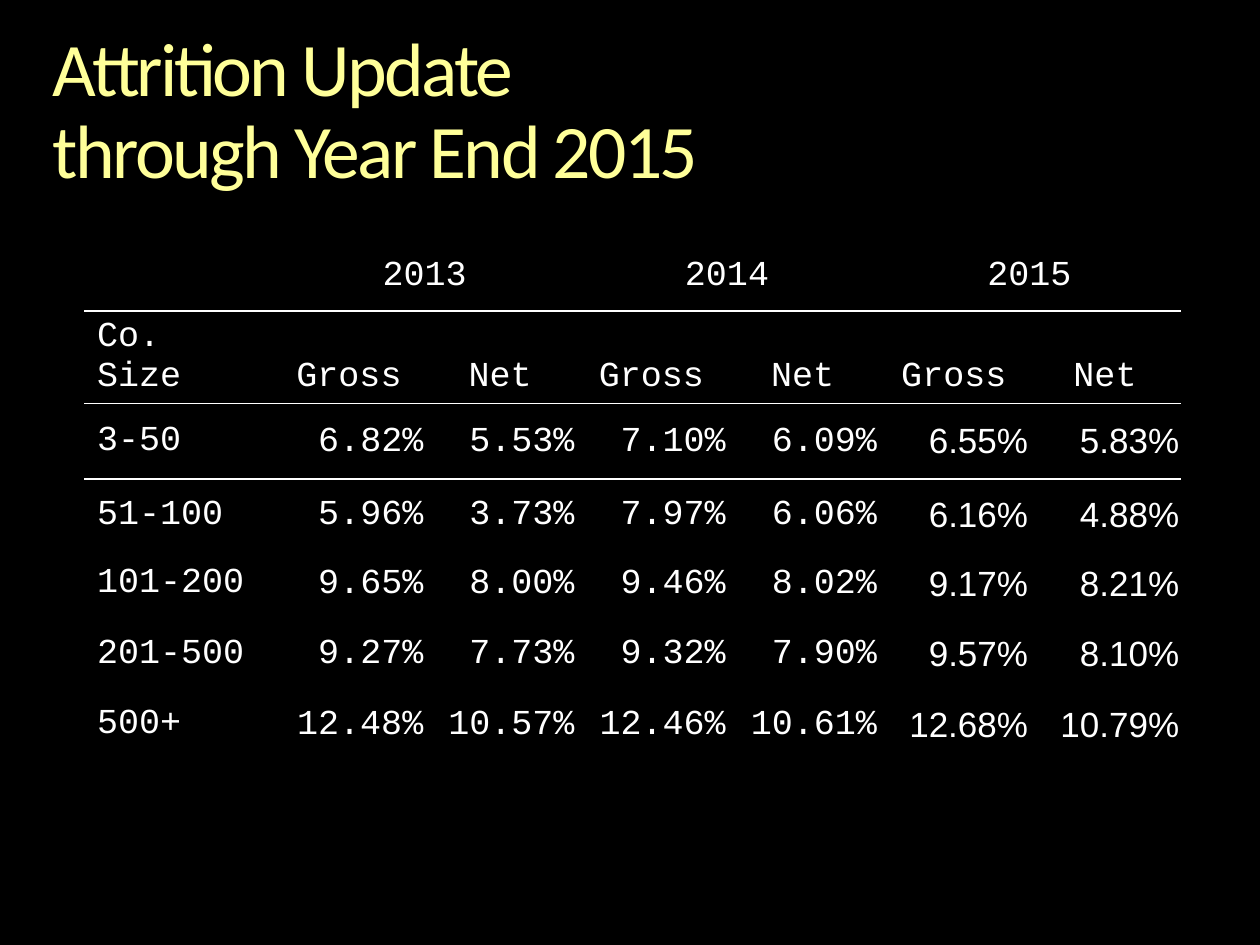
from pptx import Presentation
from pptx import util as u
from pptx.dml.color import RGBColor
from pptx.enum import text
from pptx.oxml import parse_xml
from pptx.oxml.ns import nsdecls, qn

YEARS = ["2013", "2014", "2015"]
RATES = [
    ["3-50", "6.82%", "5.53%", "7.10%", "6.09%", "6.55%", "5.83%"],
    ["51-100", "5.96%", "3.73%", "7.97%", "6.06%", "6.16%", "4.88%"],
    ["101-200", "9.65%", "8.00%", "9.46%", "8.02%", "9.17%", "8.21%"],
    ["201-500", "9.27%", "7.73%", "9.32%", "7.90%", "9.57%", "8.10%"],
    ["500+", "12.48%", "10.57%", "12.46%", "10.61%", "12.68%", "10.79%"],
]
ROWS = [["", *(t for y in YEARS for t in (y, ""))],
        ["Co. Size"] + ["Gross", "Net"] * len(YEARS), *RATES]
COL_WIDTHS = [1.5] + [1.2] * 6
ROW_HEIGHTS = [0.55, 0.63, 0.6, 0.57, 0.52, 0.6, 0.52]
NO_GRID = "{2D5ABB26-0587-4C30-8999-92F81FD0307C}"


def rgb(value):
    return RGBColor.from_string(value)


class Deck:
    ink, ground = "FFFFFF", "000000"
    mono, sans, heading = "Courier New", "Arial", "Calibri"
    title_stops = [(0, "FFFFB9"), (36, "FFFF99"), (86, "F6AE1E")]

    def __init__(self, width, height):
        self.prs = Presentation()
        self.prs.slide_width = u.Inches(width)
        self.prs.slide_height = u.Inches(height)

    def slide(self):
        self.s = self.prs.slides.add_slide(self.prs.slide_layouts[5])
        fill = self.s.background.fill
        fill.solid()
        fill.fore_color.rgb = rgb(self.ground)

    def box(self, x, y, w, h):
        sw, sh = self.prs.slide_width, self.prs.slide_height
        return int(x * sw), int(y * sh), int(w * sw), int(h * sh)

    def title(self, words, *share):
        sp = self.s.shapes.title
        sp.left, sp.top, sp.width, sp.height = self.box(*share)
        tf = sp.text_frame
        tf.margin_left = tf.margin_top = tf.margin_right = tf.margin_bottom = 0
        tf.word_wrap = True
        tf.auto_size = text.MSO_AUTO_SIZE.NONE
        tf.vertical_anchor = text.MSO_ANCHOR.TOP
        tf.text = words
        p = tf.paragraphs[0]
        p.alignment = text.PP_ALIGN.LEFT
        p.line_spacing = 0.9
        for r in p.runs:
            r.font.size = u.Pt(43.2)
            r.font.name = self.heading
            rPr = r.font._element if hasattr(r.font, "_element") else r._r.get_or_add_rPr()
            rPr.set("spc", "-150")
            rPr.insert(0, self.gradient())

    def gradient(self):
        stops = "".join(f'<a:gs pos="{pos * 1000}"><a:srgbClr val="{c}"/></a:gs>'
                        for pos, c in self.title_stops)
        return parse_xml(f'<a:gradFill {nsdecls("a")}><a:gsLst>{stops}</a:gsLst>'
                         '<a:lin ang="5400000" scaled="0"/></a:gradFill>')

    def table(self, rows, widths, heights, *share):
        frame = self.s.shapes.add_table(len(rows), len(widths), *self.box(*share))
        tbl = frame.table
        tbl.first_row = tbl.horz_banding = False
        tbl._tbl.tblPr.find(qn("a:tableStyleId")).text = NO_GRID
        for col, w in zip(tbl.columns, widths):
            col.width = u.Inches(w)
        for row, h in zip(tbl.rows, heights):
            row.height = u.Inches(h)
        for i, row in enumerate(rows):
            for j, words in enumerate(row):
                self.cell(tbl.cell(i, j), words, i, j)
        for j in range(1, len(widths), 2):
            tbl.cell(0, j).merge(tbl.cell(0, j + 1))

    def cell(self, cell, words, i, j):
        cell.fill.background()
        cell.vertical_anchor = text.MSO_ANCHOR.BOTTOM if i == 1 else text.MSO_ANCHOR.MIDDLE
        edges = (["lnT"] if i in (1, 2) else []) + (["lnB"] if i in (0, 1) else [])
        self.rules(cell, edges)
        if not words:
            return
        cell.text_frame.text = words
        p = cell.text_frame.paragraphs[0]
        is_rate = i > 1 and j > 0
        if is_rate:
            cell.margin_left = cell.margin_right = cell.margin_top = u.Inches(0.01)
            cell.margin_bottom = 0
            p.alignment = text.PP_ALIGN.RIGHT
        elif j > 0:
            p.alignment = text.PP_ALIGN.CENTER
        font = p.runs[0].font
        font.size = u.Pt(20)
        font.name = self.sans if is_rate and j > 4 else self.mono
        font.color.rgb = rgb(self.ink)

    def rules(self, cell, edges):
        tcPr = cell._tc.get_or_add_tcPr()
        for k, edge in enumerate(edges):
            tcPr.insert(k, parse_xml(
                f'<a:{edge} {nsdecls("a")} w="{u.Pt(1)}"><a:solidFill>'
                f'<a:srgbClr val="{self.ink}"/></a:solidFill></a:{edge}>'))


def main():
    deck = Deck(10, 7.5)
    deck.slide()
    deck.title("Attrition Update\vthrough Year End 2015", 0.042, 0.033, 0.917, 0.097)
    deck.table(ROWS, COL_WIDTHS, ROW_HEIGHTS, 0.067, 0.256, 0.87, 0.533)
    deck.prs.save("out.pptx")


if __name__ == "__main__":
    main()
